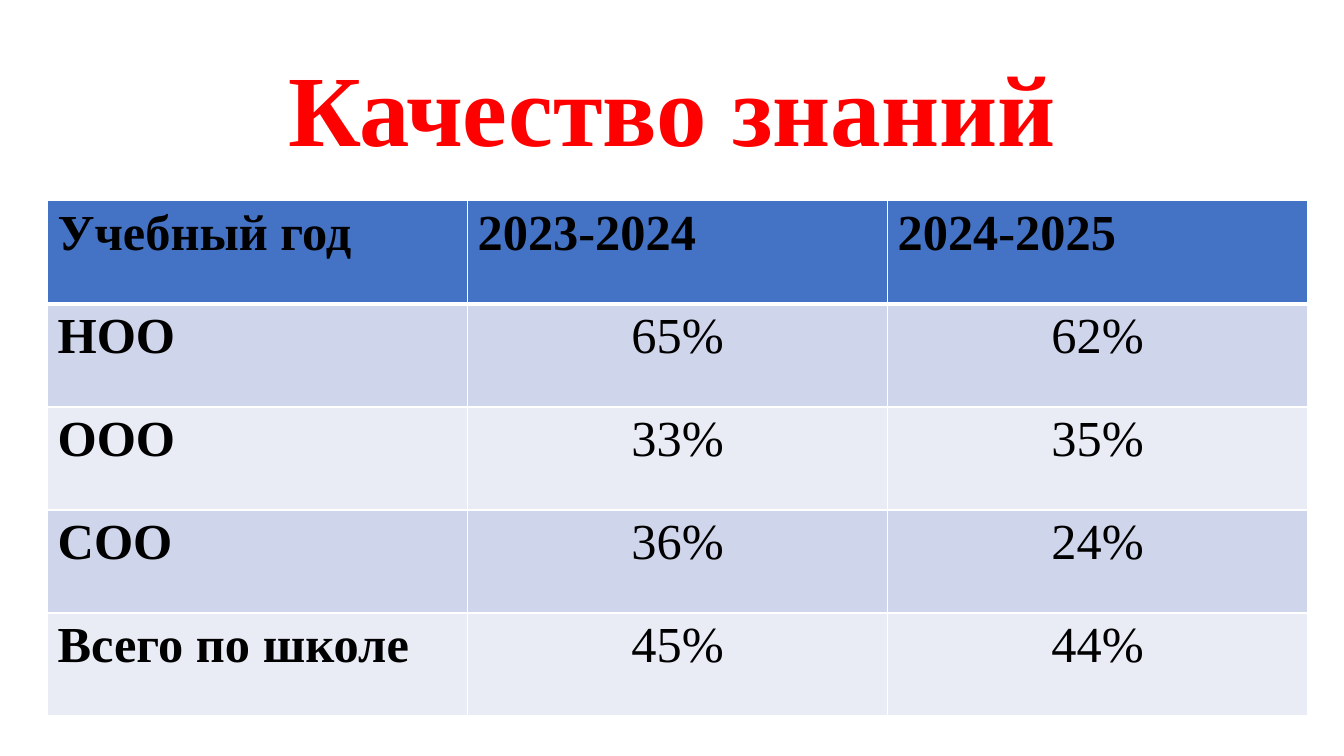
from lxml.etree import SubElement
from pptx import Presentation
from pptx.dml.color import RGBColor
from pptx.enum.text import MSO_ANCHOR, PP_ALIGN
from pptx.oxml.ns import qn
from pptx.util import Pt

FONT = "Times New Roman"
HEADER_FILL = "4472C4"
BAND_FILLS = ("E9EBF5", "CFD5EA")
ROWS = [
    ("Учебный год", "2023-2024", "2024-2025"),
    ("НОО", "65%", "62%"),
    ("ООО", "33%", "35%"),
    ("СОО", "36%", "24%"),
    ("Всего по школе", "45%", "44%"),
]


def color(value):
    return RGBColor.from_string(value)


def style_paragraph(para, size, ink, bold, align):
    para.alignment = align
    para.font.name = FONT
    para.font.size = Pt(size)
    para.font.bold = bold
    para.font.color.rgb = color(ink)


def add_title(page, text):
    box = page.shapes.add_textbox(Pt(66), Pt(28.75), Pt(828), Pt(104.4))
    frame = box.text_frame
    frame.word_wrap = True
    frame.vertical_anchor = MSO_ANCHOR.MIDDLE
    para = frame.paragraphs[0]
    para.text = text
    para.line_spacing = 0.9
    style_paragraph(para, 72, "FF0000", True, PP_ALIGN.CENTER)


def add_borders(cell, widths):
    properties = cell._tc.get_or_add_tcPr()
    for side, width in widths.items():
        line = SubElement(properties, qn(f"a:ln{side}"), w=str(Pt(width)))
        fill = SubElement(line, qn("a:solidFill"))
        SubElement(fill, qn("a:srgbClr"), val="FFFFFF")


def fill_cell(cell, text, row, column):
    is_header = row == 0
    is_value = row > 0 and column > 0
    add_borders(cell, {"L": 1, "R": 1, "T": 3 if row == 1 else 1, "B": 3 if is_header else 1})
    cell.fill.solid()
    cell.fill.fore_color.rgb = color(HEADER_FILL if is_header else BAND_FILLS[row % 2])
    cell.text = text
    align = PP_ALIGN.CENTER if is_value else PP_ALIGN.LEFT
    style_paragraph(cell.text_frame.paragraphs[0], 36, "000000", not is_value, align)


def add_quality_table(page, rows):
    frame = page.shapes.add_table(
        len(rows), len(rows[0]), Pt(34), Pt(143.5), Pt(900), Pt(368)
    )
    for row, texts in enumerate(rows):
        for column, text in enumerate(texts):
            fill_cell(frame.table.cell(row, column), text, row, column)


def main():
    deck = Presentation()
    deck.slide_width = Pt(960)
    deck.slide_height = Pt(540)
    page = deck.slides.add_slide(deck.slide_layouts[6])
    add_title(page, "Качество знаний")
    add_quality_table(page, ROWS)
    deck.save("out.pptx")


if __name__ == "__main__":
    main()
